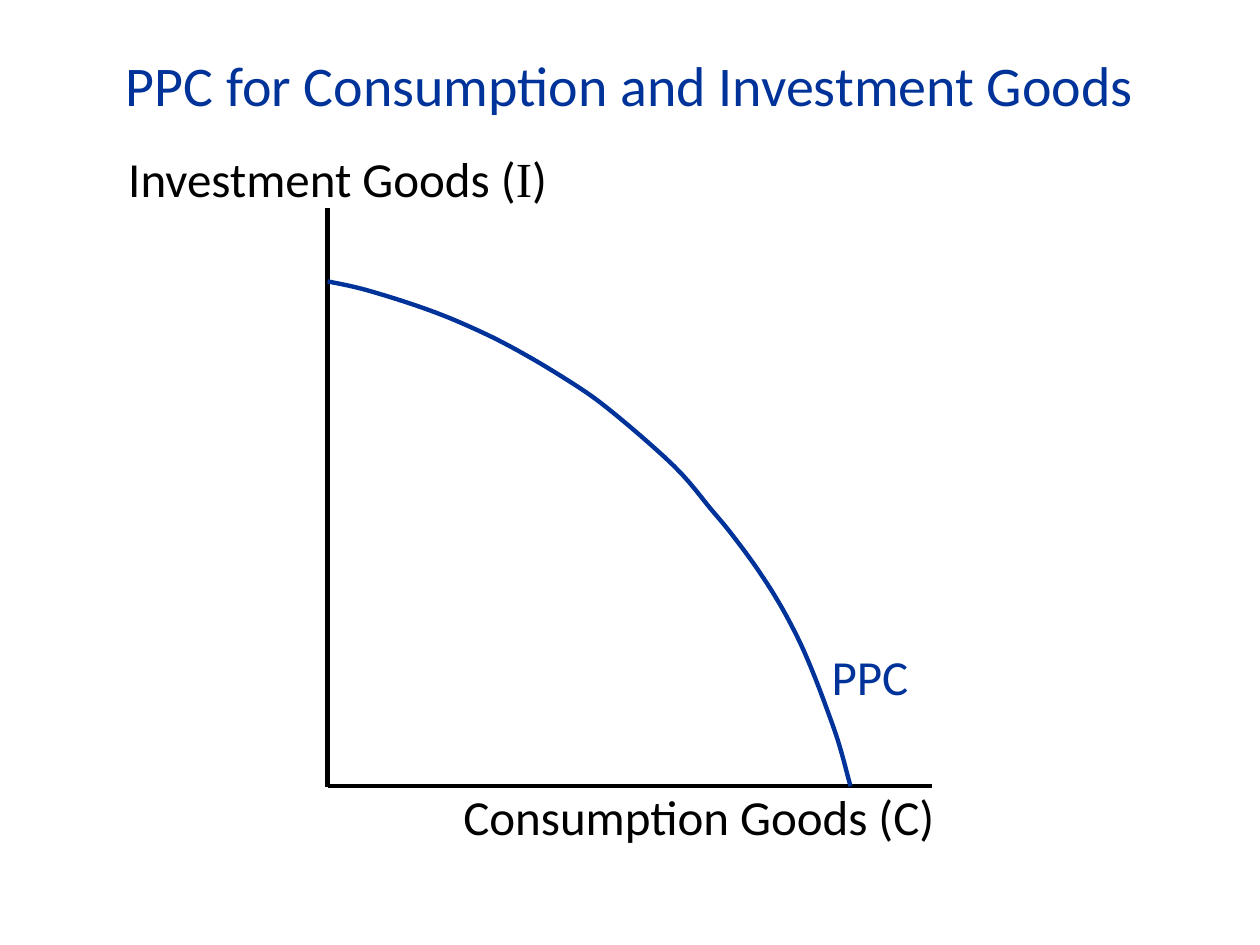
from dataclasses import dataclass

from lxml.etree import SubElement
from pptx import Presentation
from pptx.dml.color import RGBColor
from pptx.enum.shapes import MSO_CONNECTOR
from pptx.enum.text import MSO_ANCHOR, PP_ALIGN
from pptx.oxml.ns import qn
from pptx.util import Pt


@dataclass(frozen=True)
class Theme:
    ink: RGBColor = RGBColor(0, 0, 0)
    blue: RGBColor = RGBColor(0, 0x33, 0x99)
    head: Pt = Pt(32)
    body: Pt = Pt(28)
    line: Pt = Pt(2.5)
    sans: str = "Calibri"
    serif: str = "Times New Roman"


THEME = Theme()
KNOTS = [
    (0, 42), (21.6, 46.8), (54, 57), (79.2, 67), (104.4, 79.2),
    (134, 96.5), (160, 114.5), (198, 147.6), (219.6, 172.8),
    (230.4, 185.8), (244.8, 205.2), (257.8, 225.4), (269.3, 247),
    (278.6, 268.6), (288, 293.8), (293, 309), (298.8, 330.5),
]


def apply(item, form):
    for key, value in form.items():
        setattr(item, key, value)


def place(shape, box):
    apply(shape, dict(zip(("left", "top", "width", "height"), map(Pt, box))))


def write(shape, runs, size, color, **form):
    frame = shape.text_frame
    apply(frame, {"word_wrap": True, **form})
    for text, face in runs:
        run = frame.paragraphs[0].add_run()
        run.text = text
        apply(run.font, {"name": face, "size": size, "bold": False})
        run.font.color.rgb = color


def label(slide, box, runs, color):
    shape = slide.shapes.add_textbox(*map(Pt, box))
    write(shape, runs, THEME.body, color)


def stroke(shape, color):
    shape.line.width = THEME.line
    shape.line.color.rgb = color


def axis(slide, start, end):
    line = slide.shapes.add_connector(
        MSO_CONNECTOR.STRAIGHT, *map(Pt, start + end))
    stroke(line, THEME.ink)
    SubElement(line._element.spPr, qn("a:effectLst"))


def blend(a, b, c, d, t):
    return 0.5 * (2 * b + (c - a) * t + (2 * a - 5 * b + 4 * c - d) * t ** 2
                  + (3 * b - a - 3 * c + d) * t ** 3)


def smooth(knots, steps=6):
    ends = [knots[0], *knots, knots[-1]]
    for group in zip(ends, ends[1:], ends[2:], ends[3:]):
        for step in range(1, steps + 1):
            yield tuple(blend(*axis, step / steps) for axis in zip(*group))


def curve(slide, left, top):
    def spot(point):
        return Pt(left + point[0]), Pt(top + point[1])

    pen = slide.shapes.build_freeform(*spot(KNOTS[0]))
    pen.add_line_segments([spot(p) for p in smooth(KNOTS)], close=False)
    shape = pen.convert_to_shape()
    shape.shadow.inherit = False
    shape.fill.background()
    stroke(shape, THEME.blue)


def title(slide, box):
    shape = slide.shapes.title
    place(shape, box)
    write(shape, [("PPC for Consumption and Investment Goods", THEME.sans)],
          THEME.head, THEME.blue, vertical_anchor=MSO_ANCHOR.MIDDLE)
    shape.text_frame.paragraphs[0].alignment = PP_ALIGN.CENTER


def graph(slide, box):
    left, top, width, height = box
    base = top + height
    label(slide, (left + 70.5, base - 3.5, 294, 41),
          [("Consumption Goods (C)", THEME.sans)], THEME.ink)
    label(slide, (left - 121, top - 37.5, 420, 41),
          [("Investment Goods (", THEME.sans), ("I", THEME.serif),
           (")", THEME.sans)], THEME.ink)
    axis(slide, (left, top), (left, base + 0.5))
    axis(slide, (left, base), (left + width, base))
    curve(slide, left, top)
    label(slide, (left + 281, base - 83.5, 72, 41),
          [("PPC", THEME.sans)], THEME.blue)


def main():
    deck = Presentation()
    apply(deck, {"slide_width": Pt(720), "slide_height": Pt(540)})
    slide = deck.slides.add_slide(deck.slide_layouts[5])
    title(slide, (50.4, 25.2, 619.2, 46))
    graph(slide, (187.2, 118.8, 345.6, 330.5))
    deck.save("out.pptx")


if __name__ == "__main__":
    main()
